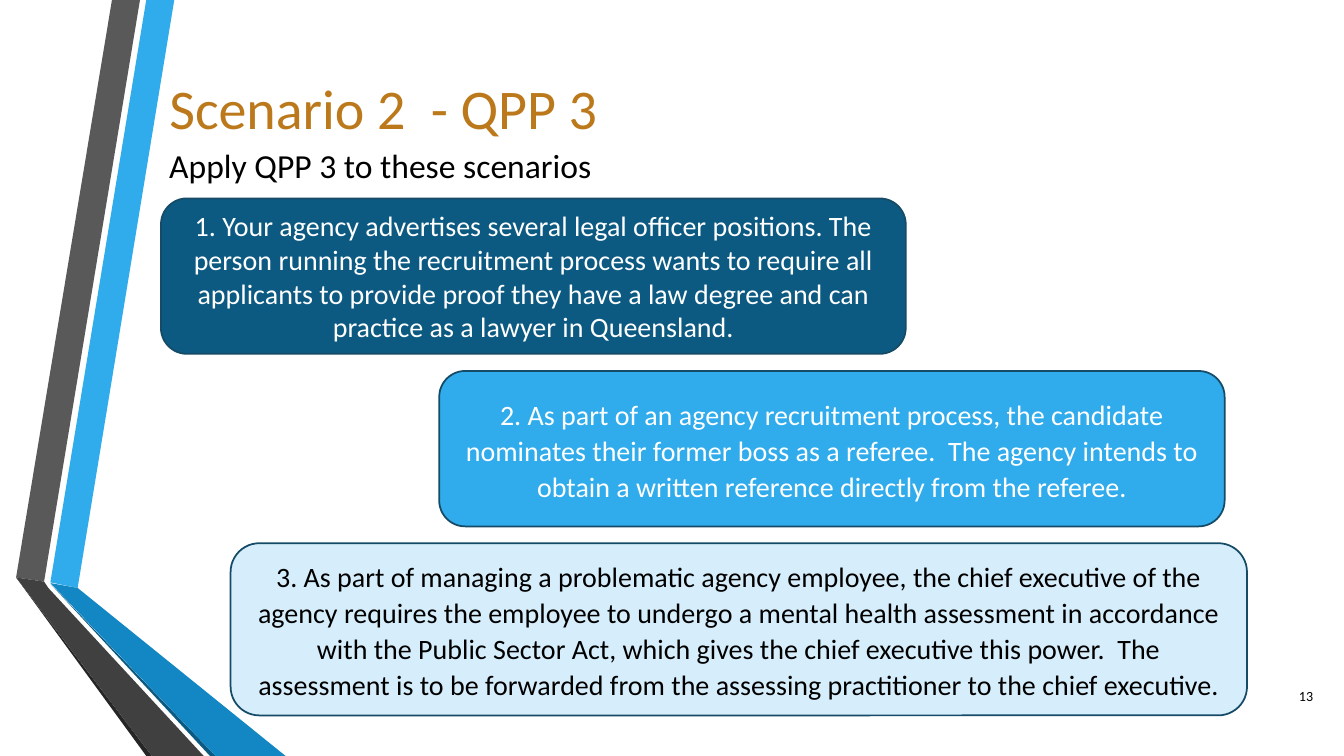
from pptx import Presentation
from pptx.dml.color import RGBColor
from pptx.enum import shapes, text
from pptx.util import Pt

DARK, BRIGHT, PALE = "0C5A82", "30ACEC", "D6EEFB"
BLACK, WHITE, OCHRE, OUTLINE = "000000", "FFFFFF", "BC791C", "154B67"

RIBBONS = [
    (BRIGHT, [(36, 416), (55.5, 420), (124.5, 0), (104.5, 0)]),
    ("595959", [(100, 0), (80, 0), (11.5, 412.5), (31.5, 415.5)]),
    ("262626", [(11.5, 412.5), (104.5, 540), (108.5, 540)]),
    (DARK, [(36, 417), (150, 540), (154, 540)]),
    ("1287C3", [(36, 416.5), (154, 540), (204, 540), (55.5, 420)]),
    ("404040", [(145.5, 540), (34.5, 420), (31.5, 415.5), (11.5, 412.5), (108.5, 540)]),
]

CARDS = [
    ((115, 141.75, 532, 111), DARK, WHITE, 1.0,
     "1. Your agency advertises several legal officer positions. The person running "
     "the recruitment process wants to require all applicants to provide proof they "
     "have a law degree and can practice as a lawyer in Queensland."),
    ((313.75, 265, 561, 111), BRIGHT, WHITE, 1.07,
     "2. As part of an agency recruitment process, the candidate nominates their former "
     "boss as a referee.  The agency intends to obtain a written reference directly "
     "from the referee."),
    ((164.75, 388, 726, 123), PALE, BLACK, 1.07,
     "3. As part of managing a problematic agency employee, the chief executive of the "
     "agency requires the employee to undergo a mental health assessment in accordance "
     "with the Public Sector Act, which gives the chief executive this power.  The "
     "assessment is to be forwarded from the assessing practitioner to the chief executive."),
]


def rgb(color):
    return RGBColor.from_string(color)


class Deck:
    font = "Calibri"

    def __init__(self):
        self.prs = Presentation()
        self.prs.slide_width, self.prs.slide_height = Pt(960), Pt(540)
        self.s = self.prs.slides.add_slide(self.prs.slide_layouts[5])

    def set_text(self, sp, words, size, color, align="LEFT", anchor="MIDDLE", spacing=1.0):
        tf = sp.text_frame
        tf.word_wrap = True
        tf.auto_size = text.MSO_AUTO_SIZE.NONE
        tf.vertical_anchor = text.MSO_ANCHOR[anchor]
        p = tf.paragraphs[0]
        p.text = words
        p.alignment = text.PP_ALIGN[align]
        p.line_spacing = spacing
        p.space_before = Pt(0)
        p.font.name, p.font.size = self.font, Pt(size)
        p.font.color.rgb = rgb(color)

    def title(self, box, words, size, color):
        sp = self.s.shapes.title
        sp.left, sp.top, sp.width, sp.height = map(Pt, box)
        self.set_text(sp, words, size, color)

    def label(self, box, words, size, color, **style):
        sp = self.s.shapes.add_textbox(*map(Pt, box))
        self.set_text(sp, words, size, color, **style)

    def ribbon(self, color, points):
        start, *rest = [(Pt(x), Pt(y)) for x, y in points]
        builder = self.s.shapes.build_freeform(*start)
        builder.add_line_segments(rest, close=True)
        sp = builder.convert_to_shape()
        sp.shadow.inherit = False
        sp.fill.solid()
        sp.fill.fore_color.rgb = rgb(color)
        sp.line.fill.background()

    def card(self, box, fill, color, spacing, words):
        sp = self.s.shapes.add_shape(shapes.MSO_SHAPE.ROUNDED_RECTANGLE, *map(Pt, box))
        sp.shadow.inherit = False
        sp.fill.solid()
        sp.fill.fore_color.rgb = rgb(fill)
        sp.line.color.rgb = rgb(OUTLINE)
        sp.line.width = Pt(1.25)
        self.set_text(sp, words, 20, color, align="CENTER", spacing=spacing)


def main():
    deck = Deck()
    for ribbon in RIBBONS:
        deck.ribbon(*ribbon)
    deck.title((113.75, 44.5, 789, 63.5), "Scenario 2  - QPP 3", 40, OCHRE)
    deck.label((113.75, 101.5, 810, 45), "Apply QPP 3 to these scenarios", 24, BLACK,
               anchor="TOP", spacing=0.97)
    deck.label((902, 482.5, 43, 29), "13", 10, BLACK, align="RIGHT")
    for card in CARDS:
        deck.card(*card)
    deck.prs.save("out.pptx")


if __name__ == "__main__":
    main()
